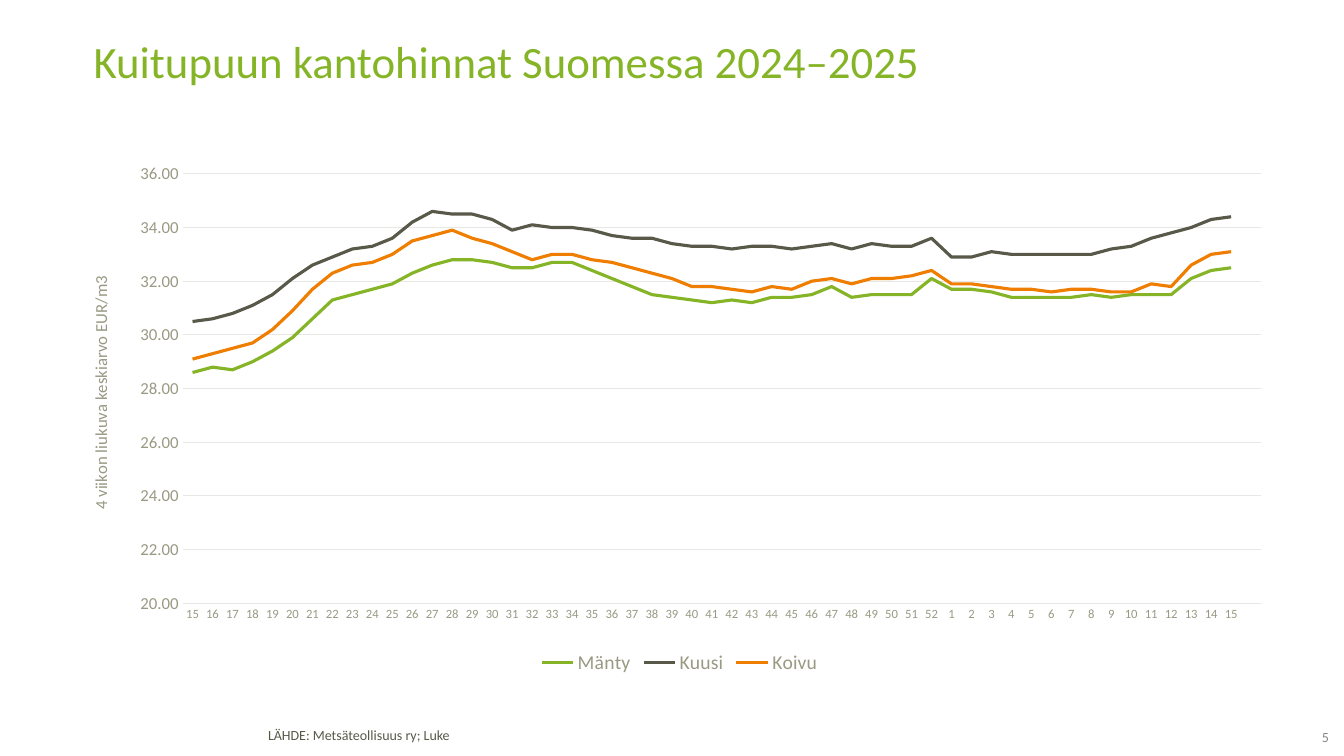
from dataclasses import dataclass

from lxml import etree
from pptx import Presentation
from pptx.chart.data import CategoryChartData
from pptx.dml.color import RGBColor
from pptx.enum.chart import XL_CHART_TYPE, XL_LEGEND_POSITION, XL_TICK_MARK
from pptx.enum.text import MSO_ANCHOR, PP_ALIGN
from pptx.oxml.ns import qn
from pptx.util import Inches, Pt

LINE_CHART = XL_CHART_TYPE.LINE
LEGEND_BOTTOM = XL_LEGEND_POSITION.BOTTOM
NO_TICK = XL_TICK_MARK.NONE
TOP, MIDDLE = MSO_ANCHOR.TOP, MSO_ANCHOR.MIDDLE
LEFT, RIGHT = PP_ALIGN.LEFT, PP_ALIGN.RIGHT


@dataclass(frozen=True)
class Theme:
    font: str = "Calibri"
    green: str = "85B526"
    dark: str = "59594A"
    orange: str = "EF7D00"
    muted: str = "999984"
    grid: str = "E7E7E3"
    page_grey: str = "878787"
    title_size: float = 32
    legend_size: float = 14
    axis_size: float = 12
    small_size: float = 10
    week_size: float = 9
    series_width: float = 2.25
    grid_width: float = 0.75


THEME = Theme()

# Weekly prices, from week 15 of 2024 to week 15 of 2025
WEEKS = [str(week) for week in [*range(15, 53), *range(1, 16)]] + [""]
PRICES = {
    "Mänty": (THEME.green, [
        28.6, 28.8, 28.7, 29, 29.4, 29.9, 30.6, 31.3, 31.5, 31.7, 31.9, 32.3, 32.6, 32.8,
        32.8, 32.7, 32.5, 32.5, 32.7, 32.7, 32.4, 32.1, 31.8, 31.5, 31.4, 31.3, 31.2, 31.3,
        31.2, 31.4, 31.4, 31.5, 31.8, 31.4, 31.5, 31.5, 31.5, 32.1, 31.7, 31.7, 31.6, 31.4,
        31.4, 31.4, 31.4, 31.5, 31.4, 31.5, 31.5, 31.5, 32.1, 32.4, 32.5, None]),
    "Kuusi": (THEME.dark, [
        30.5, 30.6, 30.8, 31.1, 31.5, 32.1, 32.6, 32.9, 33.2, 33.3, 33.6, 34.2, 34.6, 34.5,
        34.5, 34.3, 33.9, 34.1, 34, 34, 33.9, 33.7, 33.6, 33.6, 33.4, 33.3, 33.3, 33.2,
        33.3, 33.3, 33.2, 33.3, 33.4, 33.2, 33.4, 33.3, 33.3, 33.6, 32.9, 32.9, 33.1, 33,
        33, 33, 33, 33, 33.2, 33.3, 33.6, 33.8, 34, 34.3, 34.4, None]),
    "Koivu": (THEME.orange, [
        29.1, 29.3, 29.5, 29.7, 30.2, 30.9, 31.7, 32.3, 32.6, 32.7, 33, 33.5, 33.7, 33.9,
        33.6, 33.4, 33.1, 32.8, 33, 33, 32.8, 32.7, 32.5, 32.3, 32.1, 31.8, 31.8, 31.7,
        31.6, 31.8, 31.7, 32, 32.1, 31.9, 32.1, 32.1, 32.2, 32.4, 31.9, 31.9, 31.8, 31.7,
        31.7, 31.6, 31.7, 31.7, 31.6, 31.6, 31.9, 31.8, 32.6, 33, 33.1, None]),
}


def style_font(font, size, color):
    font.name = THEME.font
    font.size = Pt(size)
    font.bold = False
    font.color.rgb = RGBColor.from_string(color)


def style_line(line, color, width):
    line.color.rgb = RGBColor.from_string(color)
    line.width = Pt(width)


def add_text(slide, box, text, size, color, align=LEFT, anchor=TOP,
             spacing=1.0, insets=(0.1, 0.05, 0.1, 0.05)):
    shape = slide.shapes.add_textbox(*map(Inches, box))
    frame = shape.text_frame
    frame.text = text
    frame.word_wrap = True
    frame.vertical_anchor = anchor
    (frame.margin_left, frame.margin_top,
     frame.margin_right, frame.margin_bottom) = map(Inches, insets)
    paragraph = frame.paragraphs[0]
    paragraph.alignment = align
    paragraph.line_spacing = spacing
    style_font(paragraph.runs[0].font, size, color)


def set_plot_area(chart, x, y, width, height):
    """Fix the inner plot area, in fractions of the chart box."""
    plot_area = chart._chartSpace.chart.plotArea
    for old_layout in plot_area.findall(qn("c:layout")):
        plot_area.remove(old_layout)
    layout = etree.Element(qn("c:layout"))
    plot_area.insert(0, layout)
    manual = etree.SubElement(layout, qn("c:manualLayout"))
    settings = {"layoutTarget": "inner", "xMode": "edge", "yMode": "edge",
                "x": x, "y": y, "w": width, "h": height}
    for name, value in settings.items():
        etree.SubElement(manual, qn(f"c:{name}")).set("val", str(value))


def style_week_axis(axis):
    axis.major_tick_mark = axis.minor_tick_mark = NO_TICK
    style_line(axis.format.line, THEME.grid, THEME.grid_width)
    style_font(axis.tick_labels.font, THEME.week_size, THEME.muted)
    # Show every week, unrotated
    axis._element.find(qn("c:txPr")).find(qn("a:bodyPr")).set("rot", "0")
    label_skip = etree.Element(qn("c:tickLblSkip"))
    label_skip.set("val", "1")
    axis._element.find(qn("c:noMultiLvlLbl")).addprevious(label_skip)


def style_price_axis(axis):
    axis.minimum_scale, axis.maximum_scale, axis.major_unit = 20, 36, 2
    axis.major_tick_mark = axis.minor_tick_mark = NO_TICK
    axis.format.line.fill.background()
    style_line(axis.major_gridlines.format.line, THEME.grid, THEME.grid_width)
    axis.tick_labels.number_format = "#,##0.00"
    axis.tick_labels.number_format_is_linked = False
    style_font(axis.tick_labels.font, THEME.axis_size, THEME.muted)
    frame = axis.axis_title.text_frame
    frame.text = "4 viikon liukuva keskiarvo EUR/m3"
    style_font(frame.paragraphs[0].runs[0].font, THEME.axis_size, THEME.muted)


def add_price_chart(slide, box):
    data = CategoryChartData(number_format="0.0")
    data.categories = WEEKS
    for name, (_, prices) in PRICES.items():
        data.add_series(name, prices)
    chart = slide.shapes.add_chart(LINE_CHART, *map(Inches, box), data).chart
    chart.has_title = False
    style_font(chart.font, THEME.small_size, THEME.dark)
    chart.plots[0].vary_by_categories = False
    for series in chart.plots[0].series:
        color, _ = PRICES[series.name]
        series.smooth = False
        style_line(series.format.line, color, THEME.series_width)
    style_week_axis(chart.category_axis)
    style_price_axis(chart.value_axis)
    chart.has_legend = True
    chart.legend.position = LEGEND_BOTTOM
    chart.legend.include_in_layout = False
    style_font(chart.legend.font, THEME.legend_size, THEME.muted)
    set_plot_area(chart, 0.083, 0.03, 0.905, 0.826)


def add_footer(slide, left, top):
    add_text(slide, (left, top, 7.18, 0.27), "LÄHDE: Metsäteollisuus ry; Luke",
             THEME.small_size, THEME.dark, spacing=0.85)
    add_text(slide, (left + 10.09, top + 0.06, 0.53, 0.19), "5",
             THEME.small_size, THEME.page_grey, RIGHT, MIDDLE, insets=(0, 0, 0, 0.04))


def main():
    presentation = Presentation()
    presentation.slide_width = Inches(13.33)
    presentation.slide_height = Inches(7.5)
    slide = presentation.slides.add_slide(presentation.slide_layouts[6])
    add_text(slide, (0.83, 0.39, 11.69, 0.98), "Kuitupuun kantohinnat Suomessa 2024–2025",
             THEME.title_size, THEME.green, spacing=0.8)
    add_price_chart(slide, (0.83, 1.57, 11.82, 5.16))
    add_footer(slide, 2.56, 7.18)
    presentation.save("out.pptx")


if __name__ == "__main__":
    main()
